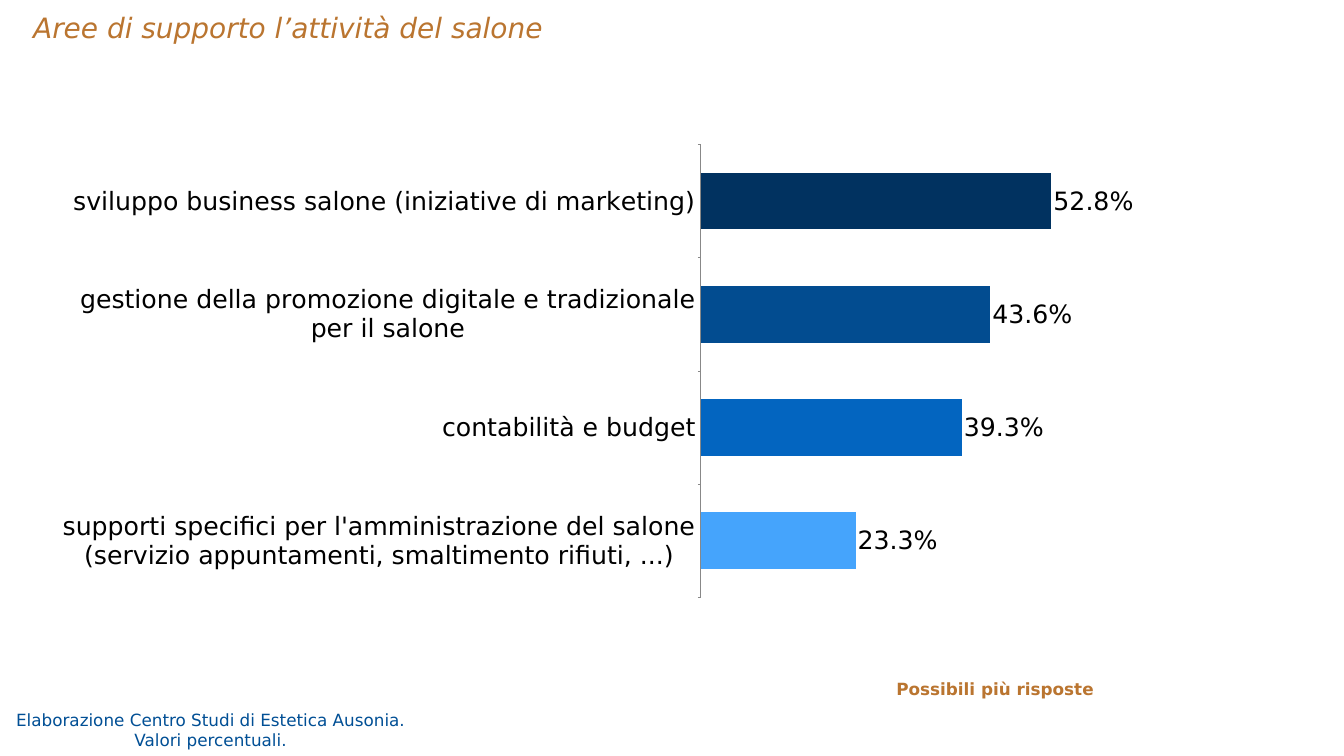
from lxml.etree import SubElement
from pptx import Presentation
from pptx.chart.data import CategoryChartData
from pptx.dml.color import RGBColor
from pptx.enum.chart import XL_CHART_TYPE, XL_LABEL_POSITION, XL_TICK_MARK
from pptx.enum.text import MSO_ANCHOR, MSO_AUTO_SIZE, PP_ALIGN
from pptx.oxml.ns import qn
from pptx.util import Cm, Pt

BLACK = RGBColor(0x00, 0x00, 0x00)
GREY = RGBColor(0x88, 0x88, 0x88)
BRONZE = RGBColor(0xBA, 0x75, 0x30)
SOURCE_BLUE = RGBColor(0x01, 0x4F, 0x95)
NAVY = RGBColor(0x01, 0x32, 0x60)
DARK_BLUE = RGBColor(0x02, 0x4C, 0x90)
BLUE = RGBColor(0x03, 0x65, 0xC0)
LIGHT_BLUE = RGBColor(0x45, 0xA4, 0xFC)

SUPPORT_AREAS = [
    ("sviluppo business salone (iniziative di marketing)", 0.528, NAVY),
    ("gestione della promozione digitale e tradizionale per il salone", 0.436, DARK_BLUE),
    ("contabilità e budget", 0.393, BLUE),
    ("supporti specifici per l'amministrazione del salone "
     "(servizio appuntamenti, smaltimento rifiuti, ...)", 0.233, LIGHT_BLUE),
]


class SlideBuilder:
    font_name = "DejaVu Sans"
    inset = Cm(0.15)
    percent = "0.0%"

    def __init__(self, slide):
        self.slide = slide

    def style_font(self, font, size, color, bold=False, italic=False):
        font.name = self.font_name
        font.size = Pt(size)
        font.color.rgb = color
        font.bold = bold
        font.italic = italic

    def fill_text(self, shape, lines, size, color, align=PP_ALIGN.LEFT,
                  spacing=1.0, **style):
        frame = shape.text_frame
        frame.word_wrap = True
        frame.auto_size = MSO_AUTO_SIZE.NONE
        frame.vertical_anchor = MSO_ANCHOR.MIDDLE
        frame.margin_left = frame.margin_right = self.inset
        frame.margin_top = frame.margin_bottom = self.inset
        for index, line in enumerate(lines):
            paragraph = frame.add_paragraph() if index else frame.paragraphs[0]
            paragraph.alignment = align
            paragraph.line_spacing = spacing
            run = paragraph.add_run()
            run.text = line
            self.style_font(run.font, size, color, **style)

    def title(self, text, left, top, width, height):
        shape = self.slide.shapes.title
        shape.left, shape.top, shape.width, shape.height = left, top, width, height
        self.fill_text(shape, [text], 40, BRONZE, spacing=1.2, italic=True)

    def note(self, lines, left, top, width, height, color, **style):
        shape = self.slide.shapes.add_textbox(left, top, width, height)
        self.fill_text(shape, lines, 24, color, **style)

    def bar_chart(self, areas, left, top, width, height, plot):
        data = CategoryChartData(number_format=self.percent)
        data.categories = [name for name, _, _ in areas]
        data.add_series("Series 1", [value for _, value, _ in areas])
        chart = self.slide.shapes.add_chart(
            XL_CHART_TYPE.BAR_CLUSTERED, left, top, width, height, data).chart
        chart.has_legend = False
        chart.has_title = False
        self.style_font(chart.font, 36, BLACK)

        # Axes
        categories = chart.category_axis
        categories.reverse_order = True
        categories.major_tick_mark = XL_TICK_MARK.OUTSIDE
        categories.format.line.color.rgb = GREY
        categories.format.line.width = Pt(0.75)
        self.style_font(categories.tick_labels.font, 36, BLACK)
        values = chart.value_axis
        values.minimum_scale, values.maximum_scale = 0, 0.6
        values.has_major_gridlines = False
        values.visible = False

        # Bars and labels
        bars = chart.plots[0]
        bars.gap_width = 100
        bars.vary_by_categories = False
        series = bars.series[0]
        series.format.fill.solid()
        series.format.fill.fore_color.rgb = BLUE
        for index, (_, _, color) in enumerate(areas):
            fill = series.points[index].format.fill
            fill.solid()
            fill.fore_color.rgb = color
        labels = series.data_labels
        labels.show_value = True
        labels.number_format = self.percent
        labels.number_format_is_linked = False
        labels.position = XL_LABEL_POSITION.OUTSIDE_END
        self.style_font(labels.font, 36, BLACK)
        self.place_plot(chart, plot)

    def place_plot(self, chart, plot):
        area = chart.plots[0]._element.getparent()
        for old_layout in area.findall(qn("c:layout")):
            area.remove(old_layout)
        layout = SubElement(area, qn("c:layout"))
        area.insert(0, layout)
        manual = SubElement(layout, qn("c:manualLayout"))
        settings = [("layoutTarget", "inner"), ("xMode", "edge"), ("yMode", "edge")]
        settings += zip("xywh", plot)
        for tag, value in settings:
            SubElement(manual, qn(f"c:{tag}")).set("val", str(value))


def main():
    presentation = Presentation()
    presentation.slide_width = Cm(67.74)
    presentation.slide_height = Cm(38.1)
    title_only = presentation.slide_layouts[5]
    builder = SlideBuilder(presentation.slides.add_slide(title_only))

    # Title
    builder.title("Aree di supporto l’attività del salone",
                  Cm(1.52), Cm(0.18), Cm(64.62), Cm(2.1))

    # Chart of support areas
    builder.bar_chart(SUPPORT_AREAS, Cm(2.5), Cm(6.68), Cm(58.4), Cm(24.08),
                      plot=(0.562, 0.025, 0.344, 0.948))

    # Notes
    builder.note(["Possibili più risposte"], Cm(45.03), Cm(33.93), Cm(12.01), Cm(1.4),
                 BRONZE, spacing=1.2, bold=True)
    builder.note(["Elaborazione Centro Studi di Estetica Ausonia.", "Valori percentuali."],
                 Cm(-0.08), Cm(35.59), Cm(21.39), Cm(2.34),
                 SOURCE_BLUE, align=PP_ALIGN.CENTER)

    presentation.save("out.pptx")


if __name__ == "__main__":
    main()
